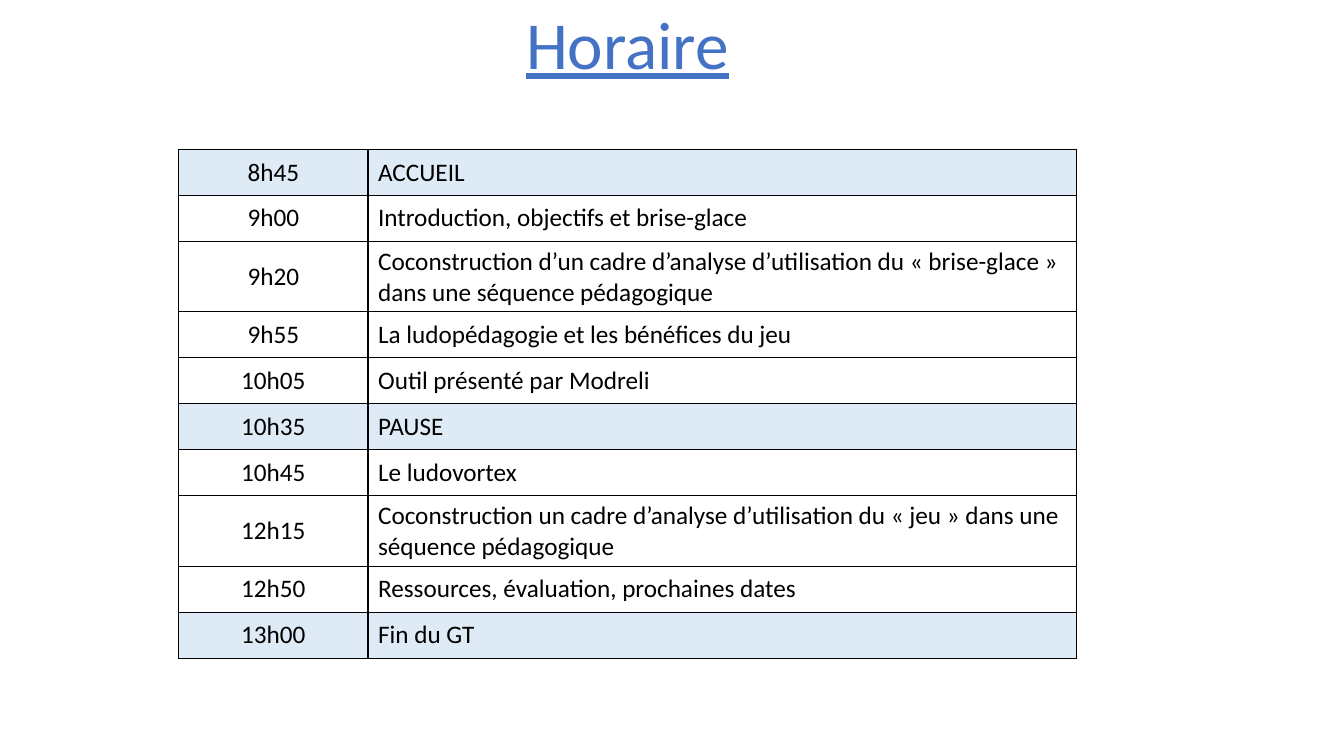
"""Build the "Horaire" slide: a title above a two-column timetable."""
from lxml import etree
from pptx import Presentation
from pptx.dml.color import RGBColor
from pptx.enum.text import MSO_ANCHOR, MSO_AUTO_SIZE, PP_ALIGN
from pptx.oxml.ns import qn
from pptx.util import Pt

CENTER, LEFT = PP_ALIGN.CENTER, PP_ALIGN.LEFT
MIDDLE = MSO_ANCHOR.MIDDLE
GROW = MSO_AUTO_SIZE.SHAPE_TO_FIT_TEXT
FONT = "Calibri"
COLORS = {"title": "4472C4", "text": "000000", "border": "000000", "highlight": "DEEBF7"}
COLUMN_WIDTHS = (135.3, 506.2)
ROW_HEIGHT = 32.85

SCHEDULE = [
    ("8h45", "ACCUEIL", True),
    ("9h00", "Introduction, objectifs et brise-glace", False),
    ("9h20", "Coconstruction d’un cadre d’analyse d’utilisation du « brise-glace » "
             "dans une séquence pédagogique", False),
    ("9h55", "La ludopédagogie et les bénéfices du jeu", False),
    ("10h05", "Outil présenté par Modreli", False),
    ("10h35", "PAUSE", True),
    ("10h45", "Le ludovortex", False),
    ("12h15", "Coconstruction un cadre d’analyse d’utilisation du « jeu » dans une "
              "séquence pédagogique", False),
    ("12h50", "Ressources, évaluation, prochaines dates", False),
    ("13h00", "Fin du GT", True),
]


def write_text(text_frame, text, size, color, alignment):
    """Put one formatted paragraph in a text frame and return its font."""
    text_frame.text = text
    paragraph = text_frame.paragraphs[0]
    paragraph.alignment = alignment
    font = paragraph.runs[0].font
    font.name = FONT
    font.size = Pt(size)
    font.color.rgb = RGBColor.from_string(COLORS[color])
    return font


def add_borders(cell):
    """Draw a one-point line on all four sides of a cell."""
    properties = cell._tc.get_or_add_tcPr()
    for position, side in enumerate(("lnL", "lnR", "lnT", "lnB")):
        line = etree.Element(qn(f"a:{side}"), w=str(Pt(1)))
        fill = etree.SubElement(line, qn("a:solidFill"))
        etree.SubElement(fill, qn("a:srgbClr"), val=COLORS["border"])
        properties.insert(position, line)


presentation = Presentation()
presentation.slide_width = Pt(960)
presentation.slide_height = Pt(540)
slide = presentation.slides.add_slide(presentation.slide_layouts[6])

title = slide.shapes.add_textbox(Pt(103), Pt(-2.2), Pt(690.5), Pt(65.5))
title.text_frame.word_wrap = True
title.text_frame.auto_size = GROW
title_font = write_text(title.text_frame, "Horaire", 48, "title", CENTER)
title_font.underline = True

table = slide.shapes.add_table(
    len(SCHEDULE), len(COLUMN_WIDTHS), Pt(127.6), Pt(106.7),
    Pt(sum(COLUMN_WIDTHS)), Pt(ROW_HEIGHT * len(SCHEDULE)),
).table
table.first_row = False
table.horz_banding = False
for column, width in zip(table.columns, COLUMN_WIDTHS):
    column.width = Pt(width)

for row, (time, activity, highlighted) in zip(table.rows, SCHEDULE):
    row.height = Pt(ROW_HEIGHT)
    for cell, text, alignment in zip(row.cells, (time, activity), (CENTER, LEFT)):
        write_text(cell.text_frame, text, 18, "text", alignment)
        cell.vertical_anchor = MIDDLE
        if highlighted:
            cell.fill.solid()
            cell.fill.fore_color.rgb = RGBColor.from_string(COLORS["highlight"])
        else:
            cell.fill.background()
        add_borders(cell)

presentation.save("out.pptx")
